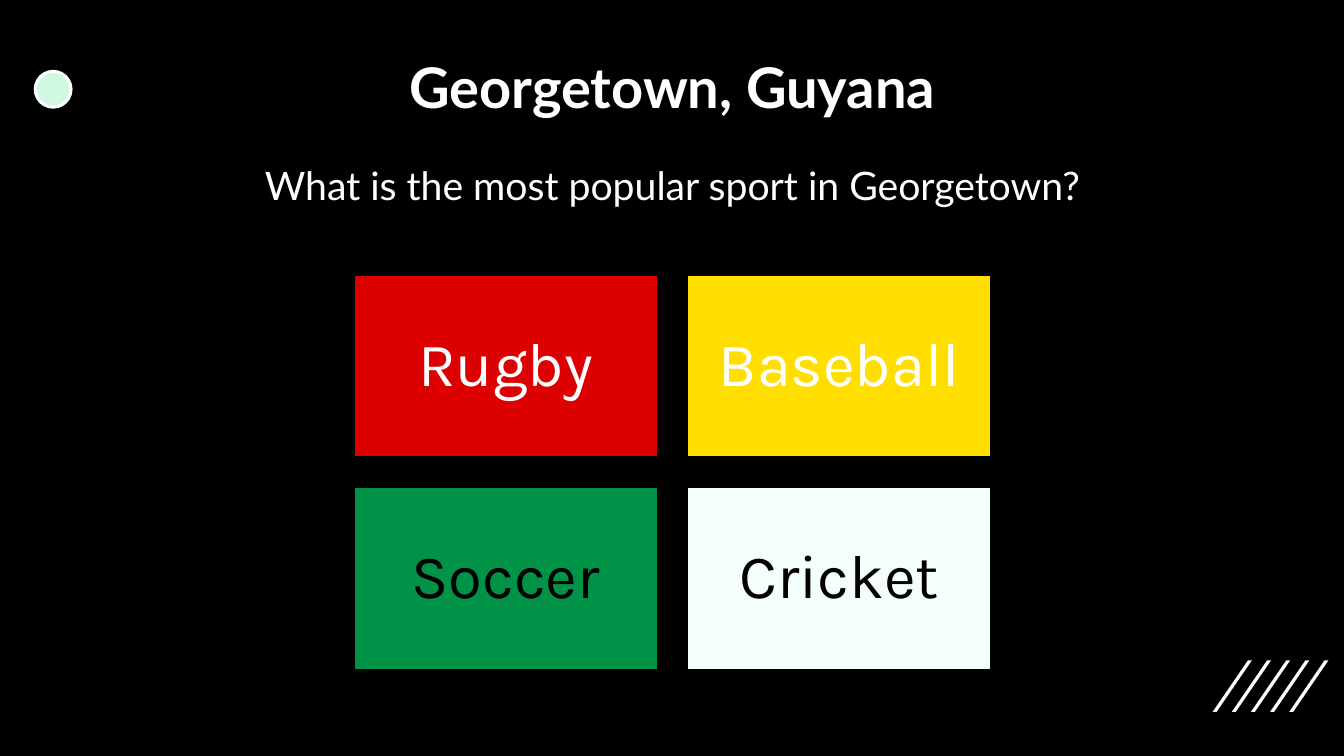
from pptx import Presentation
from pptx.dml.color import RGBColor
from pptx.enum.shapes import MSO_SHAPE as Preset
from pptx.enum.text import MSO_ANCHOR as Anchor, PP_ALIGN as Align
from pptx.util import Cm, Pt

BLACK = RGBColor(0x00, 0x00, 0x00)
WHITE = RGBColor(0xFF, 0xFF, 0xFF)
MINT = RGBColor(0xCF, 0xF7, 0xE1)
RED = RGBColor(0xDD, 0x00, 0x00)
YELLOW = RGBColor(0xFF, 0xDE, 0x00)
GREEN = RGBColor(0x00, 0x92, 0x46)
PALE = RGBColor(0xF3, 0xFF, 0xF8)

ANSWERS = [
    ("Rugby", RED, WHITE),
    ("Baseball", YELLOW, WHITE),
    ("Soccer", GREEN, BLACK),
    ("Cricket", PALE, BLACK),
]


def add_filled(slide, preset, box, fill, line=None, line_width=1):
    """Add a preset shape with a plain fill and an optional outline."""
    shape = slide.shapes.add_shape(preset, *(Cm(length) for length in box))
    shape.shadow.inherit = False
    shape.fill.solid()
    shape.fill.fore_color.rgb = fill
    if line is None:
        shape.line.fill.background()
    else:
        shape.line.color.rgb = line
        shape.line.width = Pt(line_width)
    return shape


def write_centred(frame, text, font_name, size, color, bold=False):
    """Write one centred line into a text frame."""
    frame.word_wrap = True
    paragraph = frame.paragraphs[0]
    paragraph.alignment = Align.CENTER
    run = paragraph.add_run()
    run.text = text
    run.font.name = font_name
    run.font.size = Pt(size)
    run.font.bold = bold
    run.font.color.rgb = color
    return paragraph


def add_heading(slide, box, text, size, bold=False):
    """Add a white heading line in the given box."""
    textbox = slide.shapes.add_textbox(*(Cm(length) for length in box))
    write_centred(textbox.text_frame, text, "Lato", size, WHITE, bold)


def add_hatching(slide, box, count=5, stroke_width=0.99):
    """Spread slanted strokes evenly across the box."""
    left, top, width, height = box
    step = (width - stroke_width) / (count - 1)
    for index in range(count):
        stroke_box = (left + index * step, top, stroke_width, height)
        stroke = add_filled(slide, Preset.PARALLELOGRAM, stroke_box, WHITE)
        stroke.adjustments[0] = 0.9


def add_answers(slide, box, gap=0.76, columns=2, rows=2):
    """Lay out the answer cards as a grid inside the box."""
    left, top, width, height = box
    card_width = (width - gap * (columns - 1)) / columns
    card_height = (height - gap * (rows - 1)) / rows
    for index, (answer, fill, color) in enumerate(ANSWERS):
        row, column = divmod(index, columns)
        card_box = (left + column * (card_width + gap),
                    top + row * (card_height + gap), card_width, card_height)
        card = add_filled(slide, Preset.RECTANGLE, card_box, fill, BLACK)
        frame = card.text_frame
        frame.vertical_anchor = Anchor.MIDDLE
        frame.margin_left = frame.margin_right = Cm(0.58)
        frame.margin_top = frame.margin_bottom = Cm(0.58)
        paragraph = write_centred(frame, answer, "Karla", 44, color)
        paragraph.line_spacing = 0.9


def main():
    """Build the quiz slide and save it."""
    presentation = Presentation()
    presentation.slide_width = Cm(33.87)
    presentation.slide_height = Cm(19.05)
    slide = presentation.slides.add_slide(presentation.slide_layouts[6])
    slide.background.fill.solid()
    slide.background.fill.fore_color.rgb = BLACK

    add_hatching(slide, (30.56, 16.64, 2.92, 1.3))
    add_filled(slide, Preset.OVAL, (0.89, 1.8, 0.9, 0.9), MINT, WHITE, 2.25)
    add_heading(slide, (9.5, 1.19, 14.88, 1.96), "Georgetown, Guyana", 40, True)
    add_answers(slide, (8.92, 6.93, 16.06, 9.94))
    add_heading(slide, (0.23, 3.94, 33.43, 1.45),
                "What is the most popular sport in Georgetown?", 28)
    presentation.save("out.pptx")


if __name__ == "__main__":
    main()
